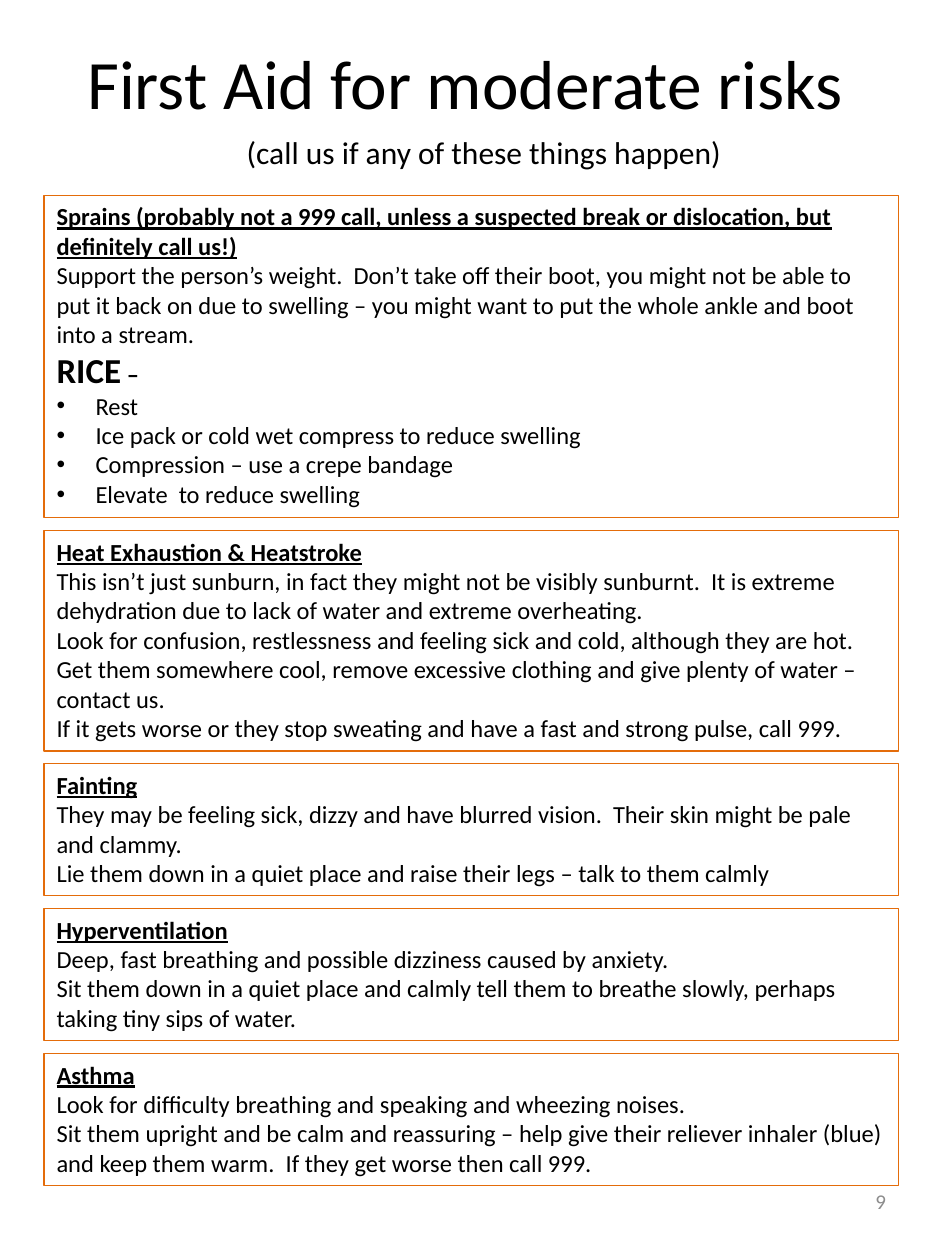
from dataclasses import dataclass

from lxml.etree import SubElement
from pptx import Presentation
from pptx.dml.color import RGBColor
from pptx.enum.shapes import MSO_SHAPE
from pptx.enum.text import MSO_ANCHOR as Anchor, MSO_AUTO_SIZE as AutoSize, PP_ALIGN as Align
from pptx.oxml.ns import qn
from pptx.util import Inches, Pt


@dataclass(frozen=True)
class Theme:
    font: str = "Calibri"
    ink: RGBColor = RGBColor(0x00, 0x00, 0x00)
    muted: RGBColor = RGBColor(0x8C, 0x8C, 0x8C)
    border: RGBColor = RGBColor(0xE4, 0x6C, 0x0A)
    border_width: float = 0.75
    title_size: float = 39.6
    subtitle_size: float = 18
    keyword_size: float = 20
    body_size: float = 14
    number_size: float = 12


LEFT, WIDTH, FIRST_TOP, GAP = 0.35, 6.78, 1.55, 0.1
BULLET_INDENT = 0.31

# Each card: height, heading, advice paragraphs, keyword, bulleted steps
CARDS = [
    (2.56,
     "Sprains (probably not a 999 call, unless a suspected break or dislocation, "
     "but definitely call us!)",
     ["Support the person’s weight.  Don’t take off their boot, you might not be able to put it "
      "back on due to swelling – you might want to put the whole ankle and boot into a stream."],
     "RICE",
     ["Rest", "Ice pack or cold wet compress to reduce swelling",
      "Compression – use a crepe bandage", "Elevate  to reduce swelling"]),
    (1.75, "Heat Exhaustion & Heatstroke",
     ["This isn’t just sunburn, in fact they might not be visibly sunburnt.  It is extreme "
      "dehydration due to lack of water and extreme overheating.",
      "Look for confusion, restlessness and feeling sick and cold, although they are hot.",
      "Get them somewhere cool, remove excessive clothing and give plenty of water – contact us.",
      "If it gets worse or they stop sweating and have a fast and strong pulse, call 999."],
     None, []),
    (1.05, "Fainting",
     ["They may be feeling sick, dizzy and have blurred vision.  Their skin might be pale "
      "and clammy.",
      "Lie them down in a quiet place and raise their legs – talk to them calmly"],
     None, []),
    (1.05, "Hyperventilation",
     ["Deep, fast breathing and possible dizziness caused by anxiety.",
      "Sit them down in a quiet place and calmly tell them to breathe slowly, perhaps taking "
      "tiny sips of water."],
     None, []),
    (1.05, "Asthma",
     ["Look for difficulty breathing and speaking and wheezing noises.",
      "Sit them upright and be calm and reassuring – help give their reliever inhaler (blue) "
      "and keep them warm.  If they get worse then call 999."],
     None, []),
]


class SlideBuilder:
    def __init__(self, slide, theme):
        self.slide = slide
        self.theme = theme

    def format_runs(self, paragraph, size, color=None, bold=False, underline=False):
        for run in paragraph.runs:
            font = run.font
            font.name, font.size = self.theme.font, Pt(size)
            font.bold, font.underline = bold, underline
            font.color.rgb = self.theme.ink if color is None else color

    def title(self, text, left, top, width, height):
        shape = self.slide.shapes.title
        shape.left, shape.top = Inches(left), Inches(top)
        shape.width, shape.height = Inches(width), Inches(height)
        frame = shape.text_frame
        frame.text = text
        frame.auto_size = AutoSize.NONE
        frame.vertical_anchor = Anchor.MIDDLE
        frame.paragraphs[0].alignment = Align.CENTER
        self.format_runs(frame.paragraphs[0], self.theme.title_size)

    def text(self, text, left, top, width, height, size, color=None,
             align=Align.LEFT, anchor=Anchor.TOP):
        box = self.slide.shapes.add_textbox(
            Inches(left), Inches(top), Inches(width), Inches(height))
        frame = box.text_frame
        frame.word_wrap = True
        frame.vertical_anchor = anchor
        frame.text = text
        frame.paragraphs[0].alignment = align
        self.format_runs(frame.paragraphs[0], size, color)

    def add_bullet(self, paragraph):
        properties = paragraph._p.get_or_add_pPr()
        properties.set("marL", str(Inches(BULLET_INDENT)))
        properties.set("indent", str(-Inches(BULLET_INDENT)))
        SubElement(properties, qn("a:buFont"), typeface="Arial")
        SubElement(properties, qn("a:buChar"), char="•")

    def card(self, top, height, heading, advice, keyword, steps):
        theme = self.theme
        shape = self.slide.shapes.add_shape(
            MSO_SHAPE.RECTANGLE, Inches(LEFT), Inches(top), Inches(WIDTH), Inches(height))
        shape.shadow.inherit = False
        shape.fill.background()
        shape.line.color.rgb = theme.border
        shape.line.width = Pt(theme.border_width)
        frame = shape.text_frame
        frame.word_wrap = True
        frame.auto_size = AutoSize.SHAPE_TO_FIT_TEXT
        frame.vertical_anchor = Anchor.TOP

        frame.text = heading
        self.format_runs(frame.paragraphs[0], theme.body_size, bold=True, underline=True)
        for line in advice:
            paragraph = frame.add_paragraph()
            paragraph.text = line
            self.format_runs(paragraph, theme.body_size)
        if keyword:
            paragraph = frame.add_paragraph()
            paragraph.text = keyword
            paragraph.add_run().text = " –"
            self.format_runs(paragraph, theme.body_size, bold=True)
            paragraph.runs[0].font.size = Pt(theme.keyword_size)
        for step in steps:
            paragraph = frame.add_paragraph()
            paragraph.text = step
            self.format_runs(paragraph, theme.body_size)
            self.add_bullet(paragraph)
        for paragraph in frame.paragraphs:
            paragraph.alignment = Align.LEFT


def main():
    presentation = Presentation()
    presentation.slide_width, presentation.slide_height = Inches(7.5), Inches(10)
    title_only = presentation.slide_layouts[5]
    theme = Theme()
    builder = SlideBuilder(presentation.slides.add_slide(title_only), theme)

    builder.title("First Aid for moderate risks ", 0.38, 0.4, 6.75, 0.5)
    builder.text("9", 5.38, 9.27, 1.75, 0.53, theme.number_size, theme.muted,
                 Align.RIGHT, Anchor.MIDDLE)
    top = FIRST_TOP
    for height, *content in CARDS:
        builder.card(top, height, *content)
        top += height + GAP
    builder.text("(call us if any of these things happen)", 1.86, 1.01, 4.63, 0.4,
                 theme.subtitle_size)
    presentation.save("out.pptx")


if __name__ == "__main__":
    main()
